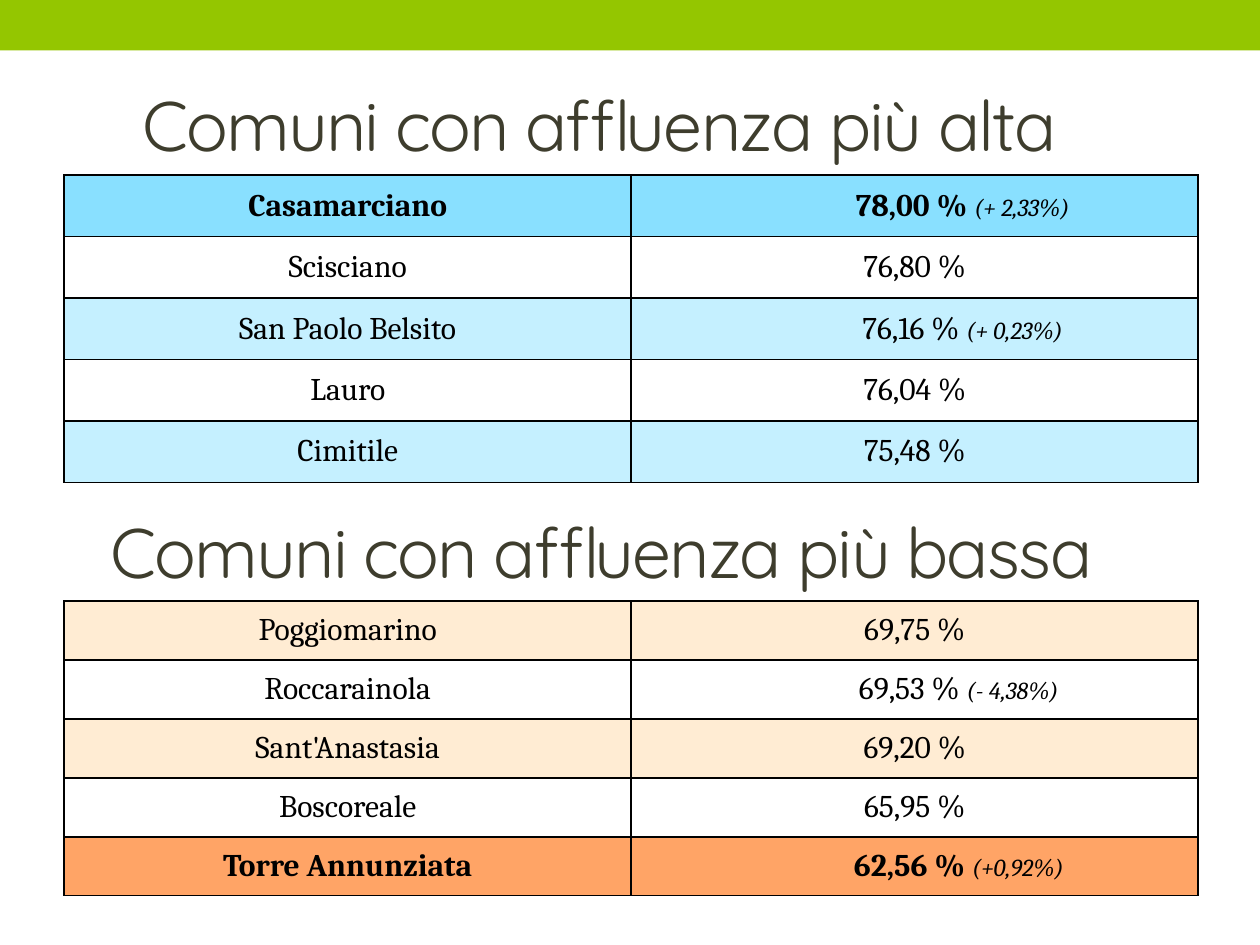
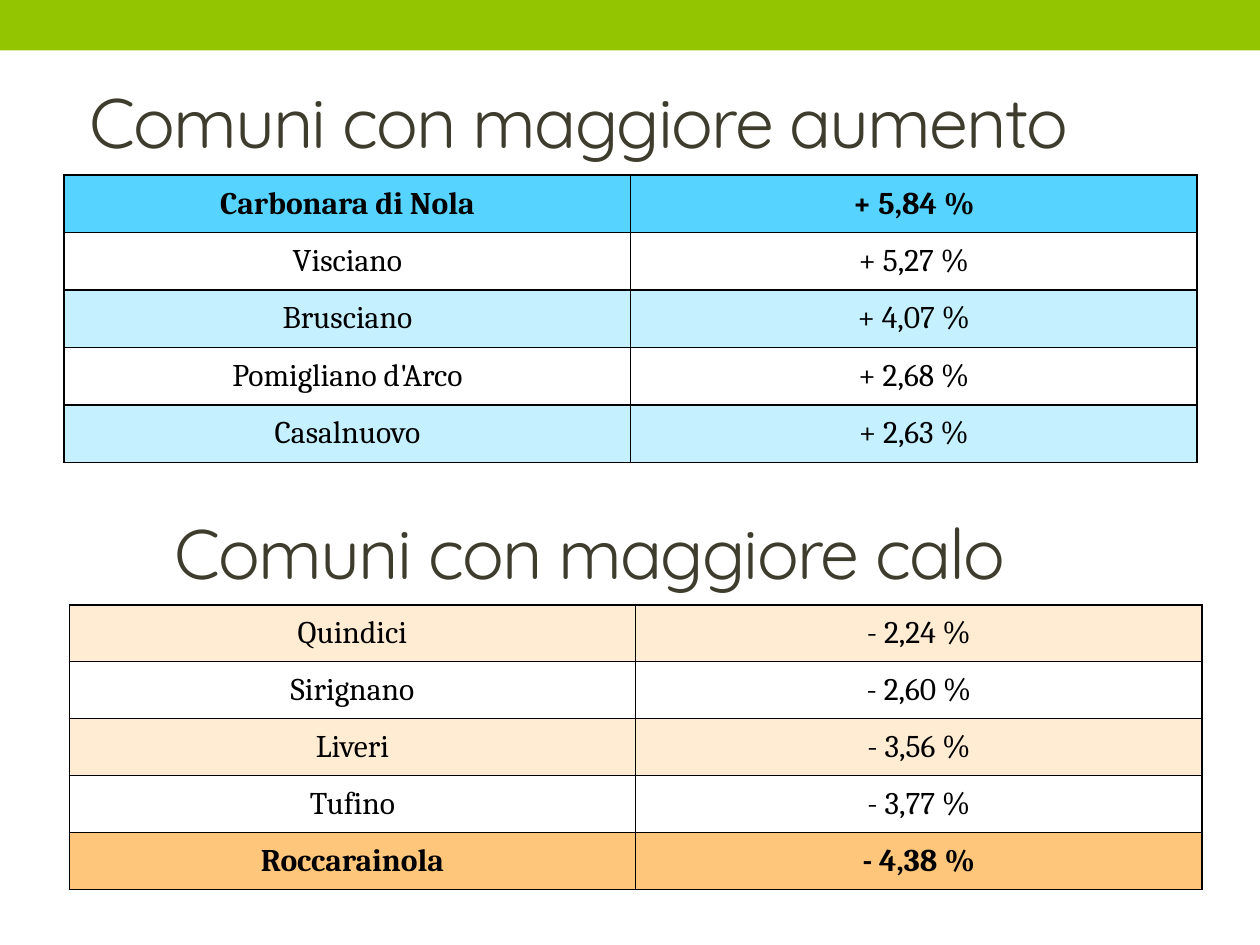
import dataclasses

import pptx
import pptx.dml.color
import pptx.enum.shapes
import pptx.enum.text
import pptx.oxml
import pptx.oxml.ns
import pptx.util

PX = 9144
CENTER = pptx.enum.text.PP_ALIGN.CENTER
LEFT = pptx.enum.text.PP_ALIGN.LEFT
MIDDLE = pptx.enum.text.MSO_ANCHOR.MIDDLE


@dataclasses.dataclass(frozen=True)
class Theme:
    """Colours, fonts and type sizes of the deck."""
    green: str = "94C600"
    heading: str = "3E3D2D"
    black: str = "000000"
    white: str = "FFFFFF"
    light_blue: str = "C5F0FF"
    sky: str = "89E0FF"
    strong_blue: str = "57D3FF"
    cream: str = "FFECD3"
    orange: str = "FFA466"
    amber: str = "FEC67A"
    heading_font: str = "Quicksand"
    table_font: str = "Cambria"
    heading_size: int = 40
    cell_size: int = 18
    note_size: int = 14


THEME = Theme()


def px(n):
    """Turn px, 100 to the inch, into EMU."""
    return pptx.util.Emu(int(n * PX))


def rgb(value):
    """Turn a hex string into a colour."""
    return pptx.dml.color.RGBColor.from_string(value)


def add_text(p, text, size, font, color, bold=False, italic=False, spacing=0):
    """Add a formatted run to a paragraph."""
    r = p.add_run()
    r.text = text
    r.font.size = pptx.util.Pt(size)
    r.font.name = font
    r.font.bold = bold
    r.font.italic = italic
    r.font.color.rgb = rgb(color)
    if spacing:
        r.font._element.set("spc", str(spacing * 100))


def add_band(prs, slide, layout):
    """Draw the green top band and move it to the shared layout."""
    sp = slide.shapes.add_shape(
        pptx.enum.shapes.MSO_SHAPE.RECTANGLE, 0, 0, prs.slide_width, px(40))
    sp.shadow.inherit = False
    sp.fill.solid()
    sp.fill.fore_color.rgb = rgb(THEME.green)
    sp.line.fill.background()
    layout.shapes.element.append(sp.element)


def set_heading(sp, text, box):
    """Place a heading shape and write its text."""
    sp.left, sp.top, sp.width, sp.height = map(px, box)
    tf = sp.text_frame
    tf.word_wrap = True
    tf.auto_size = pptx.enum.text.MSO_AUTO_SIZE.NONE
    tf.vertical_anchor = MIDDLE
    p = tf.paragraphs[0]
    p.alignment = LEFT
    add_text(p, text, THEME.heading_size, THEME.heading_font, THEME.heading,
             spacing=-1)


def set_borders(cell):
    """Give a cell thin black lines on all four sides."""
    tc_pr = cell._tc.get_or_add_tcPr()
    for side in ("lnL", "lnR", "lnT", "lnB"):
        tc_pr.append(pptx.oxml.parse_xml(
            f'<a:{side} {pptx.oxml.ns.nsdecls("a")} w="12700"><a:solidFill>'
            f'<a:srgbClr val="{THEME.black}"/></a:solidFill></a:{side}>'))


def fill_cell(cell, text, color, bold=False, note="", indent=0):
    """Format a cell and write its value with an optional small note."""
    set_borders(cell)
    cell.fill.solid()
    cell.fill.fore_color.rgb = rgb(color)
    cell.vertical_anchor = MIDDLE
    cell.margin_left = px(indent if note else 0)
    cell.margin_right = cell.margin_top = cell.margin_bottom = 0
    p = cell.text_frame.paragraphs[0]
    p.alignment = CENTER
    style = dict(font=THEME.table_font, color=THEME.black)
    add_text(p, text + " " if note else text, THEME.cell_size, bold=bold, **style)
    if note:
        add_text(p, note, THEME.note_size, italic=True, **style)


def add_ranking(slide, rows, box, band, accent, accent_row, indent=0):
    """Add a two-column ranking with striped rows and one accented row."""
    table = slide.shapes.add_table(len(rows), 2, *map(px, box)).table
    table.first_row = table.horz_banding = False
    for col in table.columns:
        col.width = px(box[2] / 2)
    for i, (town, value, *note) in enumerate(rows):
        table.rows[i].height = px(box[3] / len(rows))
        top = i == accent_row
        color = accent if top else (band, THEME.white)[i % 2]
        fill_cell(table.cell(i, 0), town, color, top)
        fill_cell(table.cell(i, 1), value, color, top, "".join(note), indent)


def add_turnout(slide):
    """Build the slide of highest and lowest turnout."""
    set_heading(slide.shapes.title, "Comuni con affluenza più alta",
                (103, 44, 804, 108))
    add_ranking(slide, [
        ("Casamarciano", "78,00 %", "(+ 2,33%)"),
        ("Scisciano", "76,80 %"),
        ("San Paolo Belsito", "76,16 %", "(+ 0,23%)"),
        ("Lauro", "76,04 %"),
        ("Cimitile", "75,48 %"),
    ], (51, 139, 900, 244), THEME.light_blue, THEME.sky, 0, indent=76)
    add_ranking(slide, [
        ("Poggiomarino", "69,75 %"),
        ("Roccarainola", "69,53 %", "(- 4,38%)"),
        ("Sant'Anastasia", "69,20 %"),
        ("Boscoreale", "65,95 %"),
        ("Torre Annunziata", "62,56 %", "(+0,92%)"),
    ], (51, 477, 900, 234), THEME.cream, THEME.orange, 4, indent=70)
    set_heading(slide.shapes.add_textbox(0, 0, 0, 0),
                "Comuni con affluenza più bassa", (78, 383, 858, 108))


def add_change(slide):
    """Build the slide of largest rise and largest fall."""
    set_heading(slide.shapes.title, "Comuni con maggiore aumento",
                (61, 52, 883, 88))
    add_ranking(slide, [
        ("Carbonara di Nola", "+ 5,84 %"),
        ("Visciano", "+ 5,27 %"),
        ("Brusciano", "+ 4,07 %"),
        ("Pomigliano d'Arco", "+ 2,68 %"),
        ("Casalnuovo", "+ 2,63 %"),
    ], (51, 139, 899, 228), THEME.light_blue, THEME.strong_blue, 0)
    set_heading(slide.shapes.add_textbox(0, 0, 0, 0),
                "Comuni con maggiore calo", (129, 391, 748, 94))
    add_ranking(slide, [
        ("Quindici", "- 2,24 %"),
        ("Sirignano", "- 2,60 %"),
        ("Liveri", "- 3,56 %"),
        ("Tufino", "- 3,77 %"),
        ("Roccarainola", "- 4,38 %"),
    ], (55, 480, 899, 226), THEME.cream, THEME.amber, 4)


def main():
    """Build and save the deck."""
    prs = pptx.Presentation()
    prs.slide_width, prs.slide_height = px(1000), px(750)
    layout = prs.slide_layouts.get_by_name("Title Only")
    turnout, change = [prs.slides.add_slide(layout) for _ in range(2)]
    add_band(prs, turnout, layout)
    add_turnout(turnout)
    add_change(change)
    prs.save("out.pptx")


if __name__ == "__main__":
    main()
